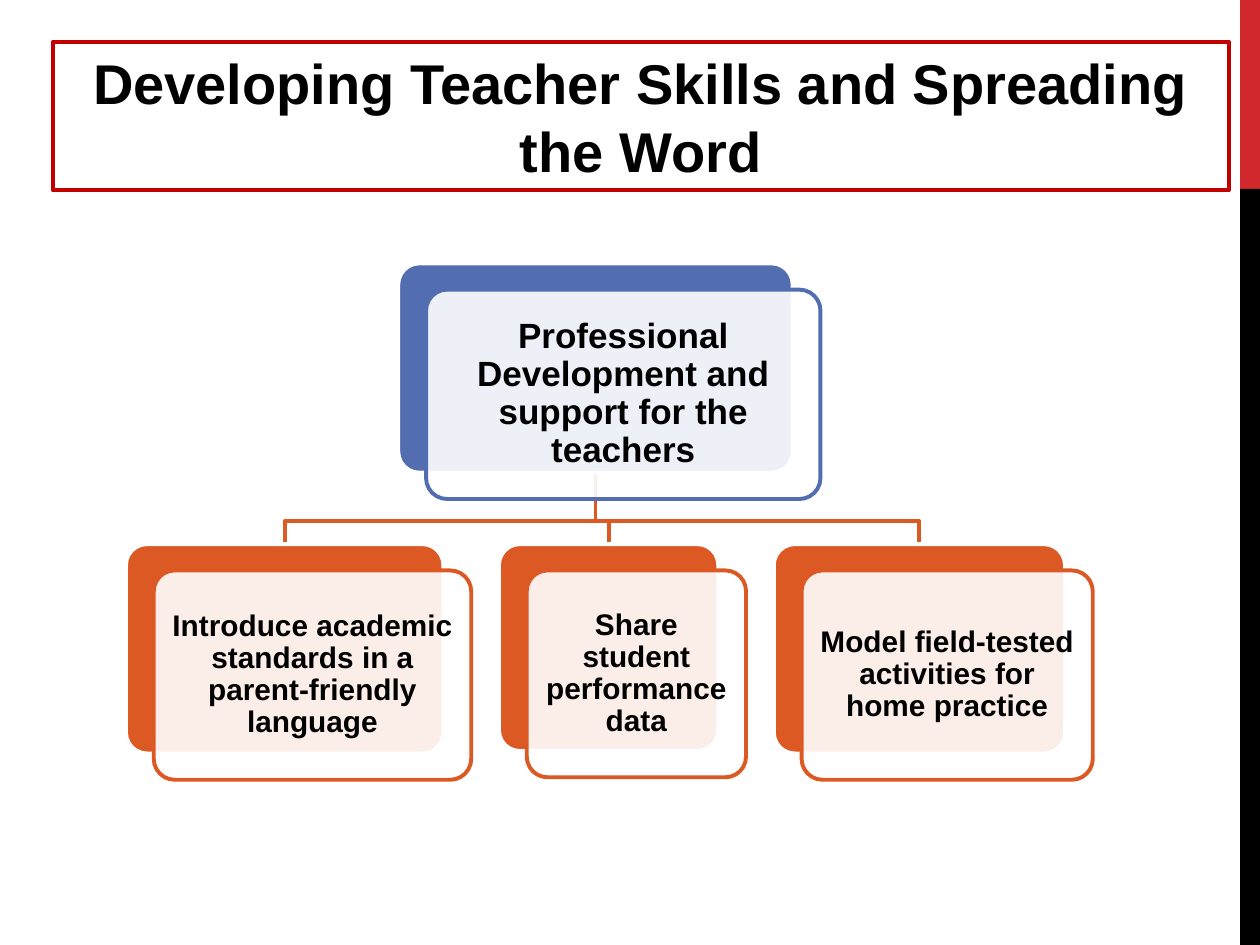
from lxml import etree
from pptx import Presentation
from pptx.dml.color import RGBColor
from pptx.enum.shapes import MSO_SHAPE
from pptx.enum.text import MSO_ANCHOR, PP_ALIGN
from pptx.oxml.ns import qn
from pptx.util import Cm, Pt

COLORS = {
    "white": "FFFFFF", "black": "000000", "band": "D1282E",
    "frame": "C00000", "blue": "526DB0", "orange": "DC5924",
}
BORDER = 2.25
SHIFT_X, SHIFT_Y = 0.56, 0.53  # offset of a front card from its back card
LABEL_INSET = 0.13
CARD_GAP = 1.12
BEND = 0.68  # part of the drop before a branch turns sideways


def color(name):
    return RGBColor.from_string(COLORS[name])


def add_block(slide, box, fill, line=None, preset=MSO_SHAPE.RECTANGLE, alpha=None):
    block = slide.shapes.add_shape(preset, *map(Cm, box))
    block.shadow.inherit = False
    block.fill.solid()
    block.fill.fore_color.rgb = color(fill)
    if alpha is not None:
        tint = block.fill._xPr.find(".//" + qn("a:srgbClr"))
        etree.SubElement(tint, qn("a:alpha")).set("val", str(alpha * 1000))
    if line:
        block.line.color.rgb = color(line)
        block.line.width = Pt(BORDER)
    else:
        block.line.fill.background()
    if preset == MSO_SHAPE.ROUNDED_RECTANGLE:
        block.adjustments[0] = 0.1
    return block


def write_text(frame, text, size, spacing=1.0, margins=(0.25, 0.13)):
    frame.word_wrap = True
    frame.vertical_anchor = MSO_ANCHOR.MIDDLE
    frame.margin_left = frame.margin_right = Cm(margins[0])
    frame.margin_top = frame.margin_bottom = Cm(margins[1])
    paragraph = frame.paragraphs[0]
    paragraph.alignment = PP_ALIGN.CENTER
    paragraph.line_spacing = spacing
    run = paragraph.add_run()
    run.text = text
    run.font.name = "Arial"
    run.font.size = Pt(size)
    run.font.bold = True
    run.font.color.rgb = color("black")


def add_side_band(slide, left, top, width, height):
    red_height = height / 5
    add_block(slide, (left, top, width, red_height), "band")
    add_block(slide, (left, top + red_height, width, height - red_height), "black")


def add_title(slide, box, text):
    title = add_block(slide, box, "white", line="frame")
    write_text(title.text_frame, text, size=32)


def add_card(slide, box, text, accent, size, margin):
    left, top, width, height = box
    rounded = MSO_SHAPE.ROUNDED_RECTANGLE
    add_block(slide, box, accent, line="white", preset=rounded)
    left, top = left + SHIFT_X, top + SHIFT_Y
    add_block(slide, (left, top, width, height), "white", line=accent,
              preset=rounded, alpha=90)
    label = slide.shapes.add_textbox(
        Cm(left + LABEL_INSET), Cm(top + LABEL_INSET),
        Cm(width - 2 * LABEL_INSET), Cm(height - 2 * LABEL_INSET))
    write_text(label.text_frame, text, size, spacing=0.9, margins=(margin, margin))


def add_branch(slide, start, end):
    (x1, y1), (x2, y2) = start, end
    bend_y = y1 + BEND * (y2 - y1)
    points = [(Cm(x), Cm(y)) for x, y in ((x1, bend_y), (x2, bend_y), (x2, y2))]
    builder = slide.shapes.build_freeform(Cm(x1), Cm(y1))
    builder.add_line_segments(points, close=False)
    branch = builder.convert_to_shape()
    branch.shadow.inherit = False
    branch.fill.background()
    branch.line.color.rgb = color("orange")
    branch.line.width = Pt(BORDER)


def add_hierarchy(slide, left, top, root_text, children):
    # Boxes of the root and of the row of children below it
    root = (left + 5.49, top, 7.95, 4.22)
    child_boxes = []
    child_left = left
    for _, width, height in children:
        child_boxes.append((child_left, top + 5.66, width, height))
        child_left += width + CARD_GAP

    # Branches lie behind the cards
    root_foot = (root[0] + root[2] / 2, root[1] + root[3])
    for box in reversed(child_boxes):
        add_branch(slide, root_foot, (box[0] + box[2] / 2, box[1]))

    # Cards
    add_card(slide, root, root_text, "blue", size=20, margin=0.2)
    for (text, _, _), box in zip(children, child_boxes):
        add_card(slide, box, text, "orange", size=17, margin=0.18)


def main():
    prs = Presentation()
    prs.slide_width, prs.slide_height = Cm(25.4), Cm(19.05)
    slide = prs.slides.add_slide(prs.slide_layouts[6])

    add_side_band(slide, 25, 0, 0.4, 19.05)
    add_title(slide, (1.07, 0.84, 23.7, 3),
              "Developing Teacher Skills and Spreading the Word")
    add_hierarchy(
        slide, 2.54, 5.31, "Professional Development and support for the teachers",
        [  # text, width, height
            ("Introduce academic standards in a parent-friendly language", 6.4, 4.22),
            ("Share student performance data", 4.42, 4.17),
            ("Model field-tested activities for home practice", 5.87, 4.22),
        ])
    prs.save("out.pptx")


if __name__ == "__main__":
    main()
